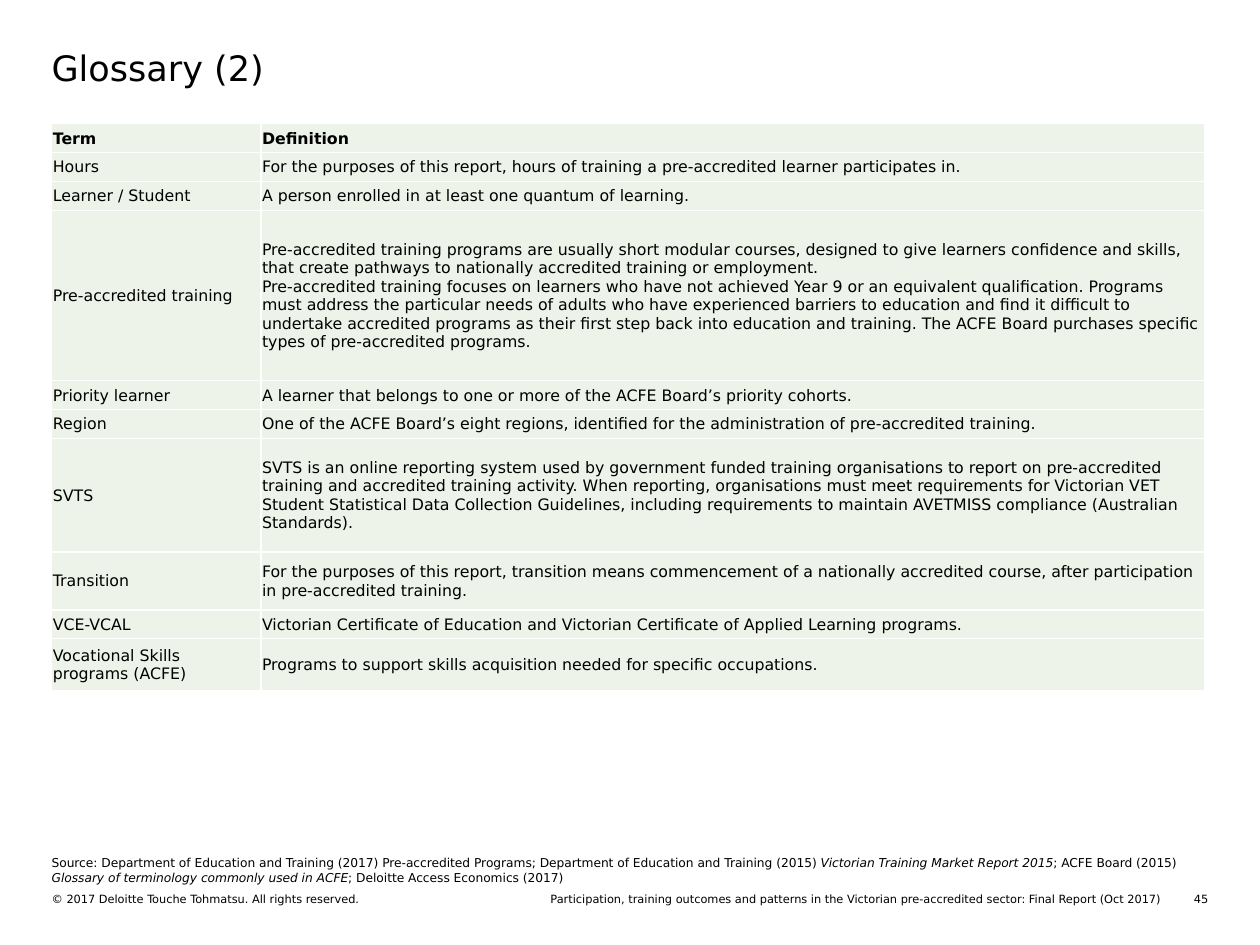
import pptx
import pptx.dml.color
import pptx.enum.text
import pptx.oxml
import pptx.oxml.ns
import pptx.util
from pptx.util import Inches

FONT = "DejaVu Sans"
ANCHOR = pptx.enum.text.MSO_ANCHOR
ALIGN = pptx.enum.text.PP_ALIGN
COL_WIDTHS = [1.66, 7.49]
ROW_HEIGHTS = [0.23, 0.23, 0.23, 1.35, 0.23, 0.23, 0.9, 0.46, 0.23, 0.41]
GLOSSARY = [
    ("Term", "Definition"),
    ("Hours", "For the purposes of this report, hours of training a pre-accredited learner participates in."),
    ("Learner / Student", "A person enrolled in at least one quantum of learning."),
    ("Pre-accredited training",
     "Pre-accredited training programs are usually short modular courses, designed to give learners "
     "confidence and skills, that create pathways to nationally accredited training or employment.\n"
     "Pre-accredited training focuses on learners who have not achieved Year 9 or an equivalent "
     "qualification. Programs must address the particular needs of adults who have experienced barriers "
     "to education and find it difficult to undertake accredited programs as their first step back into "
     "education and training. The ACFE Board purchases specific types of pre-accredited programs."),
    ("Priority learner", "A learner that belongs to one or more of the ACFE Board’s priority cohorts."),
    ("Region", "One of the ACFE Board’s eight regions, identified for the administration of "
     "pre-accredited training."),
    ("SVTS",
     "SVTS is an online reporting system used by government funded training organisations to report on "
     "pre-accredited training and accredited training activity. When reporting, organisations must meet "
     "requirements for Victorian VET Student Statistical Data Collection Guidelines, including "
     "requirements to maintain AVETMISS compliance (Australian Standards)."),
    ("Transition",
     "For the purposes of this report, transition means commencement of a nationally accredited course, "
     "after participation in pre-accredited training."),
    ("VCE-VCAL", "Victorian Certificate of Education and Victorian Certificate of Applied Learning programs."),
    ("Vocational Skills programs (ACFE)",
     "Programs to support skills acquisition needed for specific occupations."),
]
SOURCE = [
    ("Source: Department of Education and Training (2017) Pre-accredited Programs; "
     "Department of Education and Training (2015) ", False),
    ("Victorian Training Market Report 2015", True),
    ("; ACFE Board (2015) ", False),
    ("Glossary of terminology commonly used in ACFE", True),
    ("; Deloitte Access Economics (2017)", False),
]


def color(value):
    return pptx.dml.color.RGBColor.from_string(value)


def set_attrs(obj, values):
    for name, value in values.items():
        setattr(obj, name, value)


def format_font(font, size, **values):
    set_attrs(font, {"name": FONT, "size": pptx.util.Pt(size), **values})
    font.color.rgb = color("000000")


def format_frame(tf, anchor):
    set_attrs(tf, {"margin_left": 0, "margin_right": 0, "margin_top": 0, "margin_bottom": 0,
                   "word_wrap": True, "vertical_anchor": anchor})


def add_title(slide, box, text):
    sp = slide.shapes.title
    set_attrs(sp, dict(zip(("left", "top", "width", "height"), map(Inches, box))))
    tf = sp.text_frame
    format_frame(tf, ANCHOR.MIDDLE)
    tf.auto_size = pptx.enum.text.MSO_AUTO_SIZE.NONE
    tf.text = text
    p = tf.paragraphs[0]
    p.alignment = ALIGN.LEFT
    format_font(p.runs[0].font, 20)


def add_text(slide, box, runs, size, align=ALIGN.LEFT):
    tf = slide.shapes.add_textbox(*map(Inches, box)).text_frame
    format_frame(tf, ANCHOR.TOP)
    p = tf.paragraphs[0]
    p.alignment = align
    for text, italic in runs:
        r = p.add_run()
        r.text = text
        format_font(r.font, size, italic=italic)


def add_borders(cell, value):
    tc_pr = cell._tc.get_or_add_tcPr()
    for side in "LRTB":
        tc_pr.append(pptx.oxml.parse_xml(
            f'<a:ln{side} {pptx.oxml.ns.nsdecls("a")} w="{pptx.util.Pt(1)}">'
            f'<a:solidFill><a:srgbClr val="{value}"/></a:solidFill></a:ln{side}>'))


def add_glossary(slide, box):
    tbl = slide.shapes.add_table(len(GLOSSARY), len(COL_WIDTHS), *map(Inches, box)).table
    tbl.horz_banding = False
    for col, width in zip(tbl.columns, COL_WIDTHS):
        col.width = Inches(width)
    for i, (row, height, texts) in enumerate(zip(tbl.rows, ROW_HEIGHTS, GLOSSARY)):
        row.height = Inches(height)
        for cell, text in zip(row.cells, texts):
            edge = Inches(0.01)
            set_attrs(cell, {"text": text, "vertical_anchor": ANCHOR.MIDDLE, "margin_left": edge,
                             "margin_right": edge, "margin_top": edge, "margin_bottom": 0})
            add_borders(cell, "FFFFFF")
            cell.fill.solid()
            cell.fill.fore_color.rgb = color("EDF3E8")
            for p in cell.text_frame.paragraphs:
                format_font(p.runs[0].font, 9, bold=i == 0)


def add_footer(slide, box):
    left, top, width, height = box
    right = left + width
    parts = [
        (left, 4.39, "© 2017 Deloitte Touche Tohmatsu. All rights reserved.", ALIGN.LEFT),
        (right - 5.64, 5.27, "Participation, training outcomes and patterns in the Victorian "
         "pre-accredited sector: Final Report (Oct 2017)", ALIGN.RIGHT),
        (right - 0.25, 0.25, "45", ALIGN.RIGHT),
    ]
    for x, w, text, align in parts:
        add_text(slide, (x, top, w, height), [(text, False)], 6.5, align)


def main():
    prs = pptx.Presentation()
    set_attrs(prs, {"slide_width": Inches(10), "slide_height": Inches(7.5)})
    slide = prs.slides.add_slide(prs.slide_layouts[5])
    add_title(slide, (0.41, 0.35, 9.16, 0.37), "Glossary (2)")
    add_glossary(slide, (0.41, 0.98, 9.16, 4.52))
    add_text(slide, (0.41, 6.79, 9.16, 0.24), SOURCE, 7)
    add_footer(slide, (0.41, 7.08, 9.18, 0.11))
    prs.save("out.pptx")


if __name__ == "__main__":
    main()
